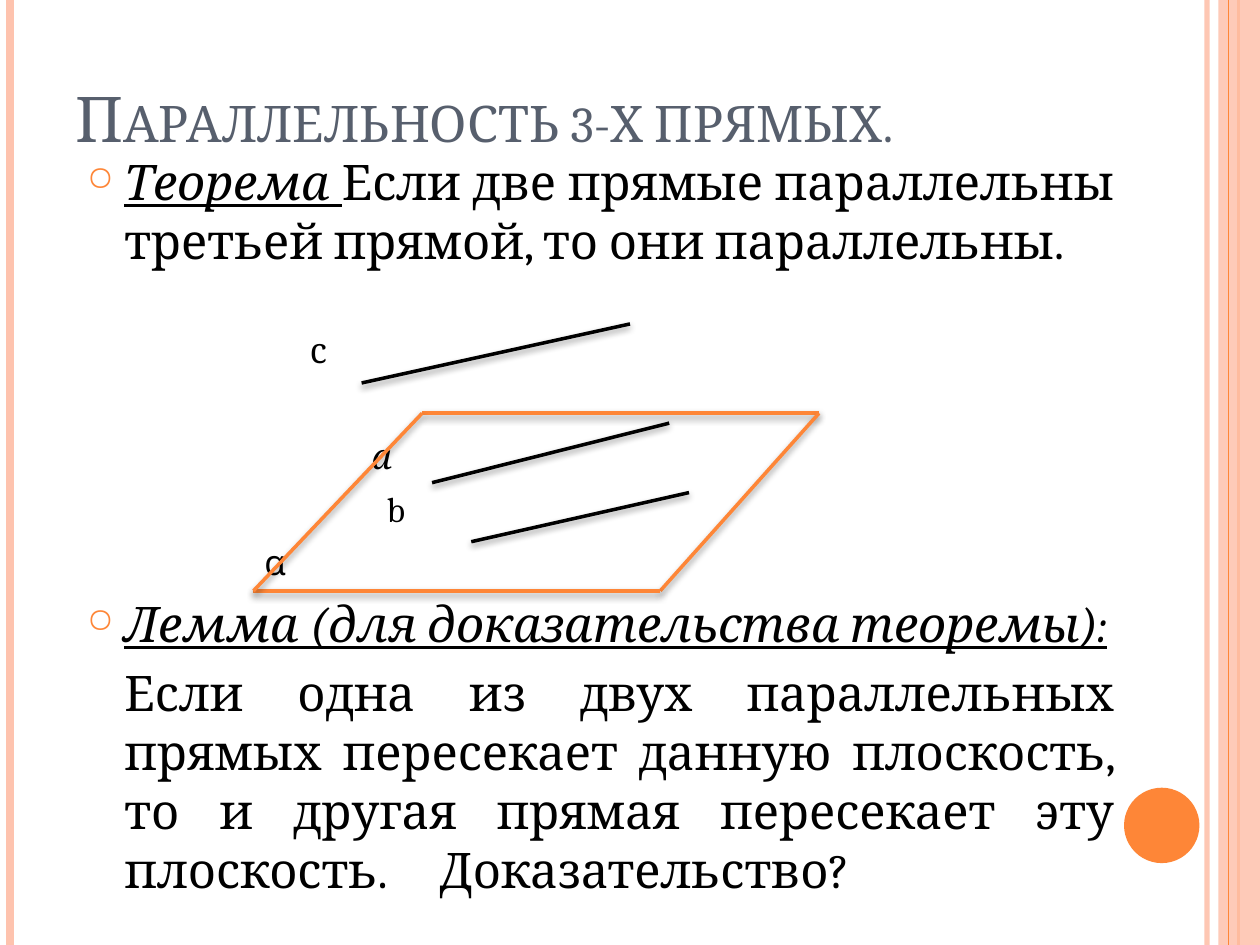
from lxml.etree import SubElement
from pptx import Presentation
from pptx.dml.color import RGBColor
from pptx.enum.shapes import MSO_CONNECTOR as Connector, MSO_SHAPE as Preset
from pptx.enum.text import MSO_ANCHOR as Anchor, PP_ALIGN as Align
from pptx.oxml.ns import qn
from pptx.util import Cm, Pt

COLORS = {"orange": "FE8637", "peach": "FEC3AE", "slate": "575F6D", "black": "000000"}


def add_text(para, text, size=28, font="Cambria", color="black", italic=False, underline=False):
    span = para.add_run()
    span.text = text
    span.font.size = Pt(size)
    span.font.name = font
    span.font.italic = italic
    span.font.underline = underline
    span.font.color.rgb = RGBColor.from_string(COLORS[color])
    return span


def add_line(start, end, color, width, shadow=False, opacity=100):
    line = page.shapes.add_connector(Connector.STRAIGHT, *map(Cm, start + end))
    line.line.width = Pt(width)
    line.line.color.rgb = RGBColor.from_string(COLORS[color])
    properties = line._element.spPr
    if opacity < 100:
        tint = properties.find(".//" + qn("a:srgbClr"))
        SubElement(tint, qn("a:alpha"), val=str(opacity * 1000))
    effects = SubElement(properties, qn("a:effectLst"))
    if shadow:
        outer = SubElement(effects, qn("a:outerShdw"), blurRad=str(Pt(4)), dist=str(Pt(2)),
                           dir="5400000", rotWithShape="0")
        shade = SubElement(outer, qn("a:srgbClr"), val=COLORS["black"])
        SubElement(shade, qn("a:alpha"), val="40000")


deck = Presentation()
deck.slide_width, deck.slide_height = Cm(25.4), Cm(19.05)
page = deck.slides.add_slide(deck.slide_layouts[6])

for x, color, width, opacity in [(24.33, "peach", 3, 93), (0.2, "peach", 4.5, 100),
                                 (24.97, "orange", 1.5, 100)]:
    add_line((x, 0), (x, 19.05), color, width, opacity=opacity)

for preset, place, color, opacity in [
    (Preset.RECTANGLE, (24.56, 0, 0.84, 19.05), "peach", 87),
    (Preset.OVAL, (22.66, 15.88, 1.52, 1.52), "orange", 100),
]:
    shape = page.shapes.add_shape(preset, *map(Cm, place))
    shape.shadow.inherit = False
    shape.line.fill.background()
    shape.fill.solid()
    shape.fill.fore_color.rgb = RGBColor.from_string(COLORS[color])
    if opacity < 100:
        tint = shape._element.spPr.find(".//" + qn("a:srgbClr"))
        SubElement(tint, qn("a:alpha"), val=str(opacity * 1000))
add_line((24.77, 0), (24.77, 19.05), "orange", 0.75)

title = page.shapes.add_textbox(Cm(1.27), Cm(0), Cm(20.75), Cm(3.12)).text_frame
title.word_wrap = True
title.vertical_anchor = Anchor.BOTTOM
title.margin_bottom = 0
heading = add_text(title.paragraphs[0], "Параллельность 3-х прямых.", size=36, color="slate")
heading.font._element.set("cap", "small")

body = page.shapes.add_textbox(Cm(1.5), Cm(2.92), Cm(21.21), Cm(15.34)).text_frame
body.word_wrap = True

emphasis = {"italic": True, "underline": True}
label = {"size": 20}
paragraphs = [
    (0.76, 3, True, [("Теорема ", emphasis),
                     ("Если две прямые параллельны третьей прямой, то они параллельны.", {})]),
    (4.5, 34, False, [("с", label)]),
    (5.74, 36, False, [("а", {"size": 20, "italic": True})]),
    (6.05, 6, False, [("b", label)]),
    (3.58, 6, False, [("α", {"size": 20, "font": "Cabin"})]),
    (0.76, 6, True, [("Лемма (для доказательства теоремы):", emphasis)]),
    (0.76, 6, False, [("Если одна из двух параллельных прямых пересекает данную плоскость, "
                       "то и другая прямая пересекает эту плоскость.\tДоказательство?", {})]),
]
for index, (indent, before, bulleted, spans) in enumerate(paragraphs):
    para = body.add_paragraph() if index else body.paragraphs[0]
    para.alignment = Align.JUSTIFY
    para.space_before = Pt(before)
    para.line_spacing = Pt(24.3 if spans[0][1].get("size") == 20 else 33.7)
    settings = para._p.get_or_add_pPr()
    settings.set("marL", str(Cm(indent)))
    settings.set("indent", str(-Cm(indent) if bulleted else 0))
    if bulleted:
        bullet_color = SubElement(settings, qn("a:buClr"))
        SubElement(bullet_color, qn("a:srgbClr"), val=COLORS["orange"])
        SubElement(settings, qn("a:buSzPct"), val="70000")
        SubElement(settings, qn("a:buChar"), char="○")
    elif "\t" in spans[0][0]:
        stops = SubElement(settings, qn("a:tabLst"))
        SubElement(stops, qn("a:tab"), pos=str(Cm(7.77)), algn="l")
    for text, style in spans:
        add_text(para, text, **style)

plane = [(8.51, 8.33), (16.51, 8.33), (13.31, 11.91), (5.11, 11.91)]
for start, end in zip(plane, plane[1:] + plane[:1]):
    add_line(start, end, "orange", 2, shadow=True)

for start, end in [((8.71, 9.73), (13.49, 8.53)), ((9.5, 10.92), (13.89, 9.93)),
                   ((7.29, 7.72), (12.7, 6.53))]:
    add_line(start, end, "black", 2, shadow=True)

deck.save("out.pptx")
